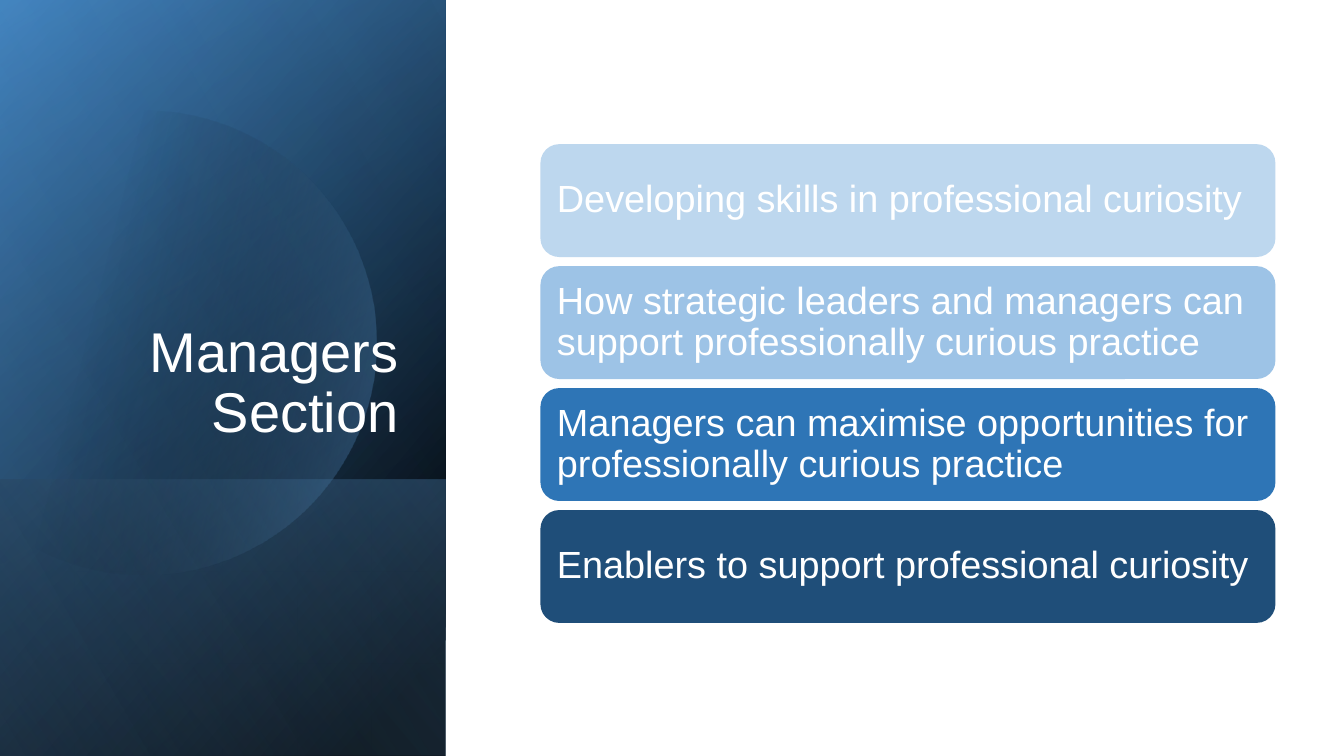
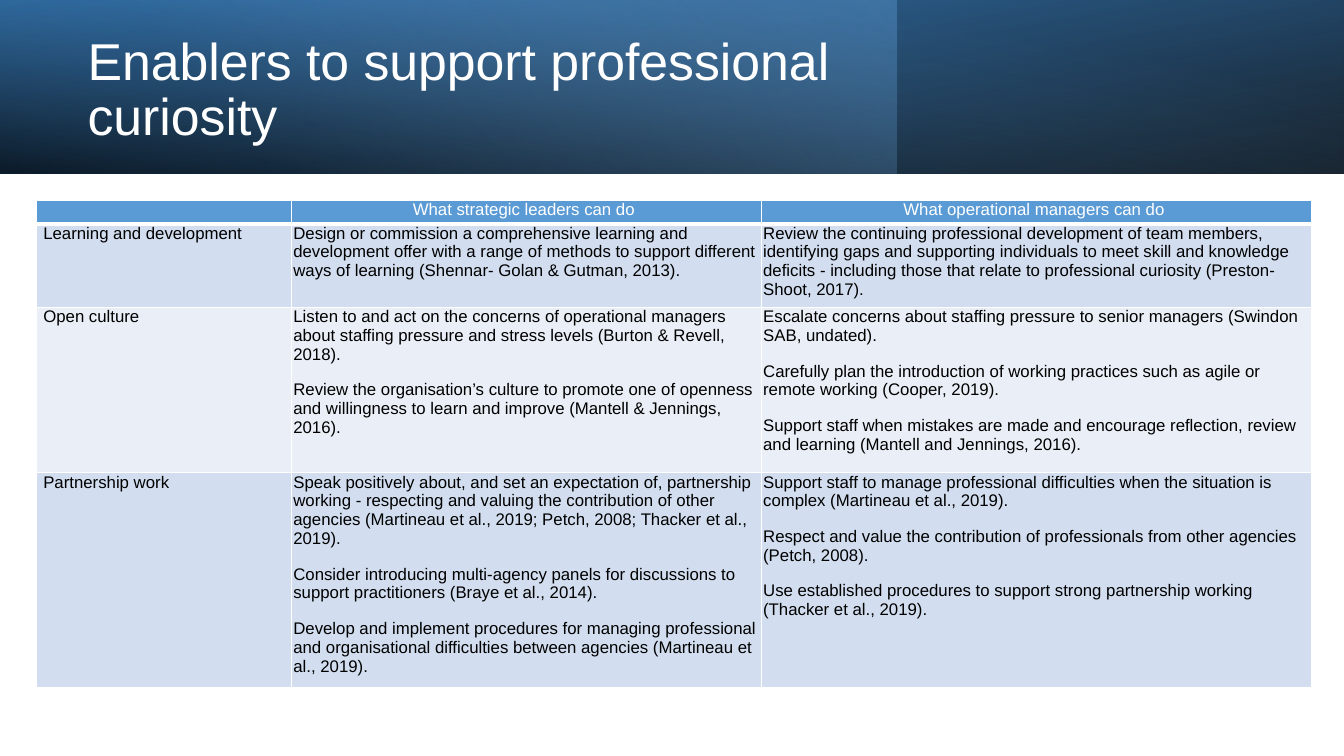
from dataclasses import dataclass
from math import acos, cos, pi, sin

from lxml.etree import SubElement
from pptx import Presentation
from pptx.dml.color import RGBColor
from pptx.enum.shapes import MSO_SHAPE
from pptx.enum.text import MSO_ANCHOR, PP_ALIGN
from pptx.oxml.ns import qn
from pptx.util import Inches, Pt

FONT = "Arial"
WHITE, BLACK = "FFFFFF", "000000"
SKY, PALE, MEDIUM, BLUE, NAVY = "5B9BD5", "BDD7EE", "9DC3E6", "2E75B6", "1F4E79"
BAND_FILLS = ("D2DEEF", "EAEFF7")
SIDE_WIDTH, HEADER_HEIGHT = 4.42, 1.72


@dataclass(frozen=True)
class Stop:
    position: int
    color: str
    alpha: int = 100


@dataclass(frozen=True)
class Panel:
    left: float
    top: float
    width: float
    height: float
    stops: tuple[Stop, ...]
    angle: int
    rotation: int = 0
    flipped: bool = False


@dataclass(frozen=True)
class Tile:
    text: str
    color: str


@dataclass(frozen=True)
class Topic:
    name: str
    leaders: tuple[str, ...]
    managers: tuple[str, ...]


def side_panel(stops: tuple[Stop, ...], angle: int, height: float = 7.5) -> Panel:
    left = (SIDE_WIDTH - height) / 2
    top = 7.5 - (height + SIDE_WIDTH) / 2
    return Panel(left, top, height, SIDE_WIDTH, stops, angle, 90, True)


SIDE_BACK = (
    side_panel((Stop(8, BLACK), Stop(100, BLUE)), 50),
    side_panel((Stop(0, BLACK, 0), Stop(99, SKY, 46)), 30),
    side_panel((Stop(2, SKY, 29), Stop(100, BLACK, 30)), 130, 2.74),
)
SIDE_FRONT = side_panel((Stop(0, BLACK, 0), Stop(99, MEDIUM, 11)), 120)
DISC_STOPS = (Stop(29, BLACK, 0), Stop(100, SKY, 43))

HEADER_PANELS = (
    Panel(0, 0, 13.33, HEADER_HEIGHT,
          (Stop(0, BLACK, 96), Stop(100, BLUE)), 100, 180, True),
    Panel(0, 0, 8.89, HEADER_HEIGHT,
          (Stop(0, SKY, 41), Stop(74, MEDIUM, 0)), 140),
    Panel(0, 0, 13.33, HEADER_HEIGHT,
          (Stop(0, BLACK, 63), Stop(78, SKY, 15)), 260, 0, True),
)

TILES = (
    Tile("Developing skills in professional curiosity", PALE),
    Tile("How strategic leaders and managers can support professionally curious practice",
         MEDIUM),
    Tile("Managers can maximise opportunities for professionally curious practice", BLUE),
    Tile("Enablers to support professional curiosity", NAVY),
)

TABLE_HEADINGS = ("", "What strategic leaders can do ", "What operational managers can do ")
TOPICS = (
    Topic(
        "Learning and development",
        ("Design or commission a comprehensive learning and development offer with a range "
         "of methods to support different ways of learning (Shennar- Golan & Gutman, 2013).",),
        ("Review the continuing professional development of team members, identifying gaps "
         "and supporting individuals to meet skill and knowledge deficits - including those "
         "that relate to professional curiosity (Preston-Shoot, 2017).",),
    ),
    Topic(
        "Open culture",
        ("Listen to and act on the concerns of operational managers about staffing pressure "
         "and stress levels (Burton & Revell, 2018).",
         "Review the organisation’s culture to promote one of openness and willingness to "
         "learn and improve (Mantell & Jennings, 2016)."),
        ("Escalate concerns about staffing pressure to senior managers (Swindon SAB, undated).",
         "Carefully plan the introduction of working practices such as agile or remote "
         "working (Cooper, 2019).",
         "Support staff when mistakes are made and encourage reflection, review and learning "
         "(Mantell and Jennings, 2016)."),
    ),
    Topic(
        "Partnership work",
        ("Speak positively about, and set an expectation of, partnership working - respecting "
         "and valuing the contribution of other agencies (Martineau et al., 2019; Petch, 2008; "
         "Thacker et al., 2019).",
         "Consider introducing multi-agency panels for discussions to support practitioners "
         "(Braye et al., 2014).",
         "Develop and implement procedures for managing professional and organisational "
         "difficulties between agencies (Martineau et al., 2019)."),
        ("Support staff to manage professional difficulties when the situation is complex "
         "(Martineau et al., 2019).",
         "Respect and value the contribution of professionals from other agencies "
         "(Petch, 2008).",
         "Use established procedures to support strong partnership working "
         "(Thacker et al., 2019)."),
    ),
)
COLUMN_WIDTHS = (2.53, 4.66, 5.46)
ROW_HEIGHTS = (0.23, 0.83, 1.64, 2.01)


def rgb(color: str) -> RGBColor:
    return RGBColor.from_string(color)


def write_text(frame, *texts: str, size: float, color: str = WHITE,
               align=PP_ALIGN.LEFT, line_spacing: float = 1.0, spacing: float = 0) -> None:
    frame.word_wrap = True
    for index, text in enumerate(texts):
        paragraph = frame.add_paragraph() if index else frame.paragraphs[0]
        paragraph.alignment = align
        paragraph.line_spacing = line_spacing
        paragraph.space_before = paragraph.space_after = Pt(spacing)
        if not text:
            SubElement(paragraph._p, qn("a:endParaRPr"), sz=str(int(size * 100)))
            continue
        run = paragraph.add_run()
        run.text = text
        run.font.name = FONT
        run.font.size = Pt(size)
        run.font.bold = False
        run.font.color.rgb = rgb(color)


def fill_gradient(shape, stops: tuple[Stop, ...], angle: int) -> None:
    shape.shadow.inherit = False
    shape.line.fill.background()
    shape.fill.background()
    properties = shape._element.spPr
    gradient = SubElement(properties, qn("a:gradFill"), rotWithShape="1")
    stop_list = SubElement(gradient, qn("a:gsLst"))
    for stop in stops:
        entry = SubElement(stop_list, qn("a:gs"), pos=str(stop.position * 1000))
        color = SubElement(entry, qn("a:srgbClr"), val=stop.color)
        if stop.alpha < 100:
            SubElement(color, qn("a:alpha"), val=str(stop.alpha * 1000))
    SubElement(gradient, qn("a:lin"), ang=str(angle * 60000), scaled="0")
    properties.replace(properties.find(qn("a:noFill")), gradient)


def add_panel(slide, panel: Panel) -> None:
    shape = slide.shapes.add_shape(
        MSO_SHAPE.RECTANGLE, Inches(panel.left), Inches(panel.top),
        Inches(panel.width), Inches(panel.height))
    shape.rotation = panel.rotation
    if panel.flipped:
        shape._element.spPr.find(qn("a:xfrm")).set("flipH", "1")
    fill_gradient(shape, panel.stops, panel.angle)


def add_disc(slide, center_x: float, center_y: float, radius: float) -> None:
    limit = acos(-center_x / radius)
    steps = 90
    angles = [limit * (2 * step / steps - 1) for step in range(steps + 1)]
    points = [(Inches(center_x + radius * cos(angle)), Inches(center_y + radius * sin(angle)))
              for angle in angles]
    builder = slide.shapes.build_freeform(*points[0])
    builder.add_line_segments(points[1:], close=True)
    fill_gradient(builder.convert_to_shape(), DISC_STOPS, 14)


def add_title(slide, text: str, left: float, top: float, width: float, height: float,
              size: float, align=PP_ALIGN.LEFT, anchor=MSO_ANCHOR.MIDDLE) -> None:
    box = slide.shapes.add_textbox(Inches(left), Inches(top), Inches(width), Inches(height))
    box.text_frame.vertical_anchor = anchor
    write_text(box.text_frame, text, size=size, align=align, line_spacing=0.9)


def add_tile(slide, tile: Tile, top: float) -> None:
    shape = slide.shapes.add_shape(
        MSO_SHAPE.ROUNDED_RECTANGLE, Inches(5.36), Inches(top), Inches(7.29), Inches(1.12))
    shape.shadow.inherit = False
    shape.line.fill.background()
    shape.fill.solid()
    shape.fill.fore_color.rgb = rgb(tile.color)
    frame = shape.text_frame
    frame.margin_left = frame.margin_right = Inches(0.11)
    frame.margin_top = frame.margin_bottom = Inches(0.11)
    frame.vertical_anchor = MSO_ANCHOR.MIDDLE
    write_text(frame, tile.text, size=27, line_spacing=0.9)


def format_cell(cell, fill: str, side_margin: float, bottom_border: float) -> None:
    cell.margin_left = cell.margin_right = Inches(side_margin)
    cell.margin_top = cell.margin_bottom = Inches(0)
    properties = cell._tc.get_or_add_tcPr()
    for edge, width in (("L", 1), ("R", 1), ("T", 1), ("B", bottom_border)):
        line = SubElement(properties, qn(f"a:ln{edge}"), w=str(Pt(width)))
        SubElement(SubElement(line, qn("a:solidFill")), qn("a:srgbClr"), val=WHITE)
    cell.fill.solid()
    cell.fill.fore_color.rgb = rgb(fill)


def add_enablers_table(slide) -> None:
    table = slide.shapes.add_table(
        len(ROW_HEIGHTS), len(COLUMN_WIDTHS), Inches(0.36), Inches(1.99),
        Inches(sum(COLUMN_WIDTHS)), Inches(sum(ROW_HEIGHTS))).table
    table.first_row = table.horz_banding = False
    for column, width in zip(table.columns, COLUMN_WIDTHS):
        column.width = Inches(width)
    for row, height in zip(table.rows, ROW_HEIGHTS):
        row.height = Inches(height)
    for cell, heading in zip(table.rows[0].cells, TABLE_HEADINGS):
        format_cell(cell, SKY, 0.02, 3)
        write_text(cell.text_frame, heading, size=12, align=PP_ALIGN.CENTER, spacing=6)
    for index, topic in enumerate(TOPICS):
        contents = ((topic.name,), topic.leaders, topic.managers)
        for column, texts in enumerate(contents):
            cell = table.cell(index + 1, column)
            format_cell(cell, BAND_FILLS[index % 2], 0.02 if column else 0.07, 1)
            write_text(cell.text_frame, *texts, size=12, color=BLACK, spacing=6)


def build_section_slide(slide) -> None:
    for panel in SIDE_BACK:
        add_panel(slide, panel)
    add_disc(slide, 1.43, 3.4, 2.3)
    add_panel(slide, SIDE_FRONT)
    add_title(slide, "Managers Section", 0.64, 1.84, 3.41, 2.62, 40,
              PP_ALIGN.RIGHT, MSO_ANCHOR.BOTTOM)
    for index, tile in enumerate(TILES):
        add_tile(slide, tile, 1.43 + 1.21 * index)


def build_enablers_slide(slide) -> None:
    for panel in HEADER_PANELS:
        add_panel(slide, panel)
    add_title(slide, "Enablers to support professional curiosity", 0.77, 0.27, 7.72, 1.27, 37)
    add_enablers_table(slide)


def main() -> None:
    presentation = Presentation()
    presentation.slide_width = Inches(13.33)
    presentation.slide_height = Inches(7.5)
    blank = presentation.slide_layouts[6]
    for build in (build_section_slide, build_enablers_slide):
        build(presentation.slides.add_slide(blank))
    presentation.save("out.pptx")


if __name__ == "__main__":
    main()
